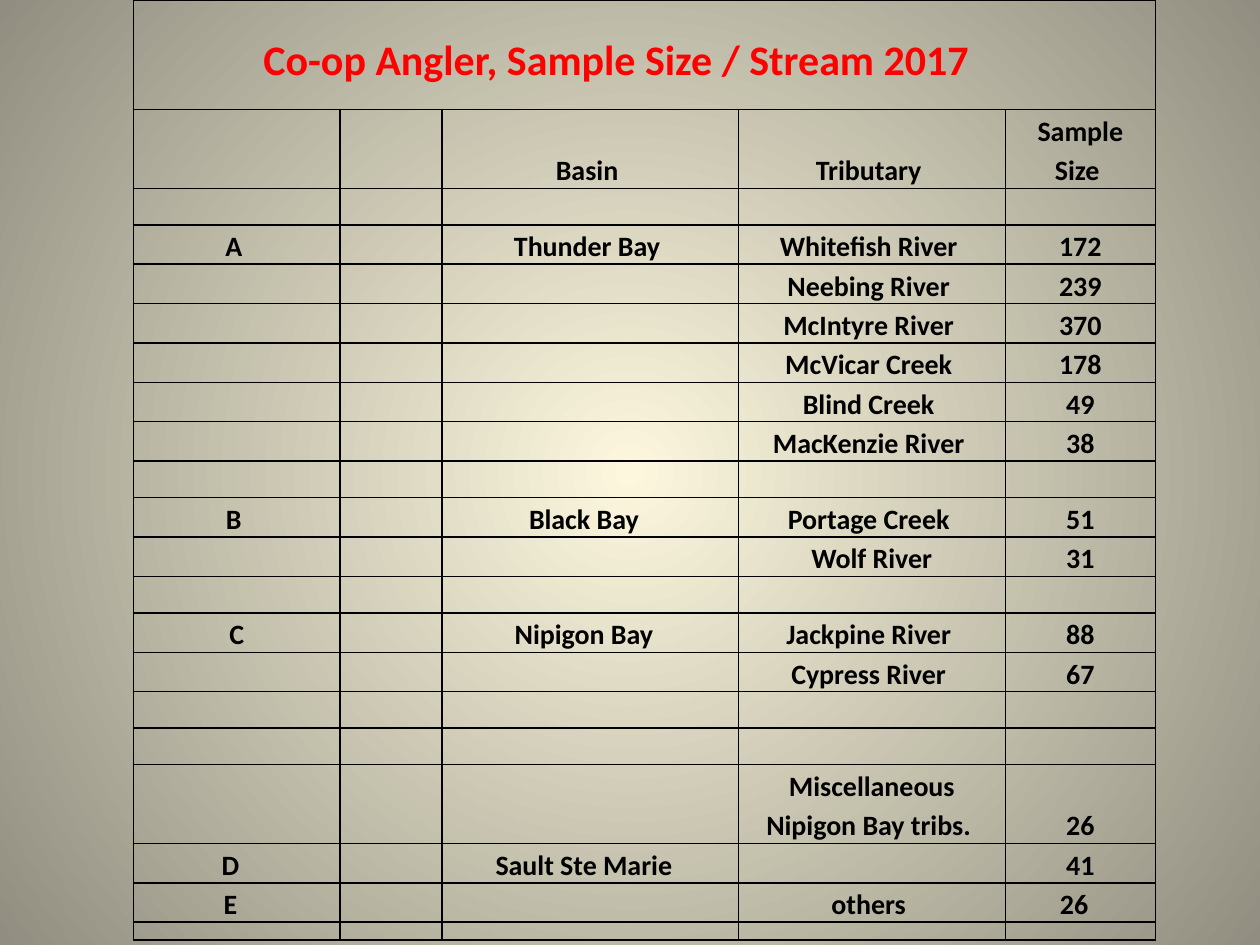
from lxml import etree
from pptx import Presentation
from pptx.dml.color import RGBColor
from pptx.enum import text
from pptx.oxml import ns
from pptx.util import Inches, Pt

HUES = {"ink": "000000", "title": "FF0000", "glow": "FCF7DD", "edge": "918E81"}
FONT = "Calibri"
COLS = [1.64, 0.81, 2.35, 2.12, 1.19]
LINE = 0.29
DATA = [
    ("", "", "Basin ", "Tributary ", "Sample Size "),
    (),
    ("A ", "", "Thunder Bay ", "Whitefish River ", "172"),
    ("", "", "", "Neebing River ", "239"),
    ("", "", "", "McIntyre River ", "370"),
    ("", "", "", "McVicar Creek ", "178"),
    ("", "", "", "Blind Creek ", "49"),
    ("", "", "", "MacKenzie River ", "38"),
    (),
    ("B ", "", "Black Bay  ", "Portage Creek ", "51"),
    ("", "", "", "Wolf River", "31"),
    (),
    ("C", "", "Nipigon Bay  ", "Jackpine River ", "88"),
    ("", "", "", "Cypress River ", "67"),
    (),
    (),
    ("", "", "", "Miscellaneous Nipigon Bay tribs. ", "26"),
    ("D  ", "", "Sault Ste Marie  ", "", "41"),
    ("E  ", "", "", "others ", "26  "),
    (),
]
TALL = ("Basin ", "Miscellaneous Nipigon Bay tribs. ")


class Deck:
    def __init__(self):
        self.show = Presentation()
        self.show.slide_width, self.show.slide_height = Inches(10), Inches(7.5)
        self.slide = self.show.slides.add_slide(self.show.slide_layouts[6])

    def hue(self, name):
        return RGBColor.from_string(HUES[name])

    def ground(self):
        fill = self.slide.background.fill
        fill.gradient()
        for stop, name, spot in zip(fill.gradient_stops, ("glow", "edge"), (0, 1)):
            stop.color.rgb = self.hue(name)
            stop.position = spot
        grad = self.slide.element.find(".//" + ns.qn("a:gradFill"))
        grad.remove(grad.find(ns.qn("a:lin")))
        ring = etree.SubElement(grad, ns.qn("a:path"))
        ring.set("path", "circle")
        rect = etree.SubElement(ring, ns.qn("a:fillToRect"))
        for side in "ltrb":
            rect.set(side, "50000")

    def table(self, left, top, cols, rows):
        frame = self.slide.shapes.add_table(
            len(rows), len(cols), Inches(left), Inches(top),
            Inches(sum(cols)), Inches(sum(rows)))
        grid = frame.table
        grid.first_row = grid.horz_banding = False
        for col, wide in zip(grid.columns, cols):
            col.width = Inches(wide)
        for row, high in zip(grid.rows, rows):
            row.height = Inches(high)
        return grid

    def edges(self, cell, sides):
        props = cell._tc.get_or_add_tcPr()
        for spot, side in enumerate("LRTB"):
            line = etree.Element(ns.qn("a:ln" + side), w=str(Pt(1)))
            if side in sides:
                fill = etree.SubElement(line, ns.qn("a:solidFill"))
                etree.SubElement(fill, ns.qn("a:srgbClr"), val=HUES["ink"])
            else:
                etree.SubElement(line, ns.qn("a:noFill"))
            props.insert(spot, line)

    def cell(self, cell, words, sides="LRTB", size=16, hue="ink", align="CENTER"):
        cell.fill.background()
        self.edges(cell, sides)
        cell.vertical_anchor = text.MSO_ANCHOR.BOTTOM
        cell.margin_left = cell.margin_right = Inches(0.06)
        cell.margin_top = cell.margin_bottom = 0
        para = cell.text_frame.paragraphs[0]
        para.alignment = text.PP_ALIGN[align]
        para.line_spacing = 1.15
        if words:
            run = para.add_run()
            run.text = words
            run.font.name, run.font.size, run.font.bold = FONT, Pt(size), True
            run.font.color.rgb = self.hue(hue)
        else:
            tail = etree.SubElement(para._p, ns.qn("a:endParaRPr"), sz=str(size * 100))
            etree.SubElement(tail, ns.qn("a:latin"), typeface=FONT)


def main():
    deck = Deck()
    deck.ground()
    body = [LINE * (2 if set(row) & set(TALL) else 1) for row in DATA]
    body[-1] = 0.14
    grid = deck.table(1.06, 0, COLS, [0.71, 0.16] + body)
    last = len(COLS) - 1

    for r, side in enumerate("TB"):
        for c in range(len(COLS)):
            ends = {0: "L", last: "R"}.get(c, "")
            words = "Co-op Angler, Sample Size / Stream 2017" if r == c == 0 else ""
            deck.cell(grid.cell(r, c), words, side + ends,
                      24 if words else 6, "title", "LEFT")
    head = grid.cell(0, 0)
    head.merge(grid.cell(0, last - 1))
    head.margin_left = Inches(1.03)
    head.margin_bottom = Inches(0.02)

    for r, row in enumerate(DATA):
        size = 6 if r == len(DATA) - 1 else 16
        for c, words in enumerate(row or [""] * len(COLS)):
            deck.cell(grid.cell(r + 2, c), words, size=size)
    deck.show.save("out.pptx")


if __name__ == "__main__":
    main()
